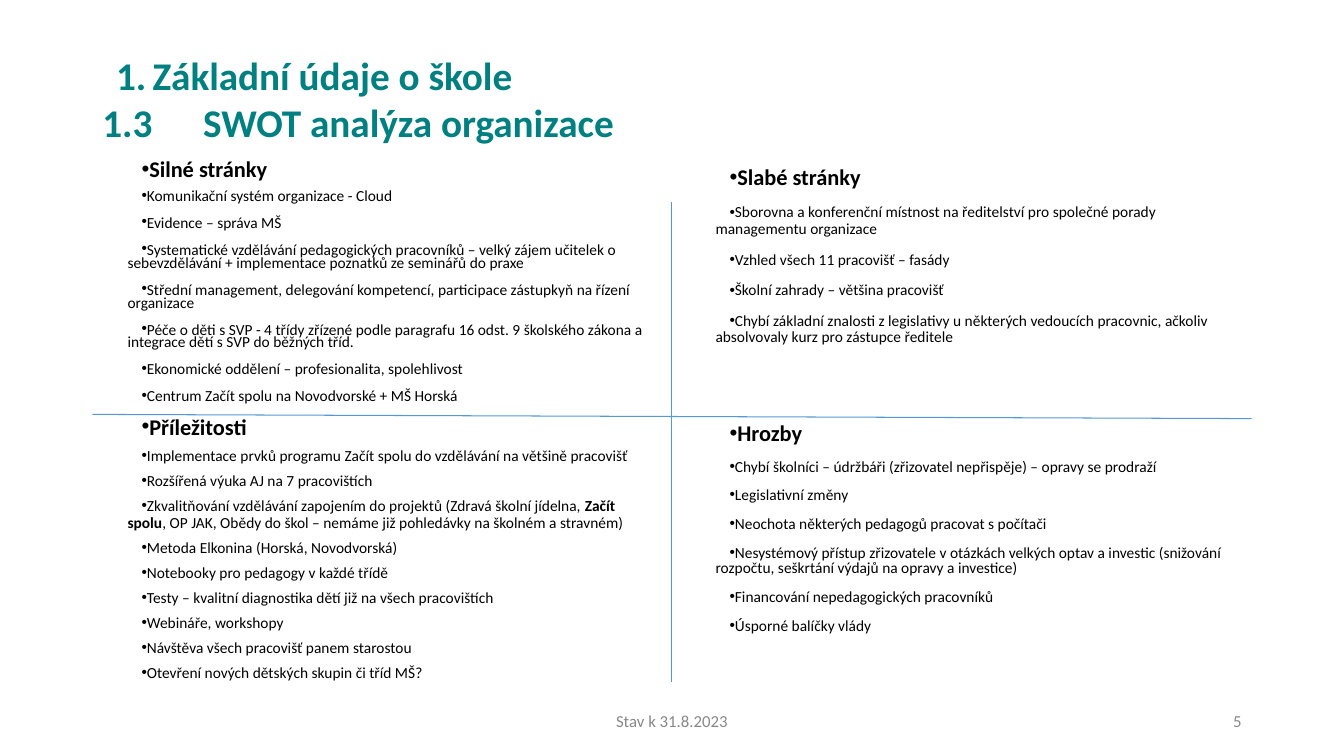
from dataclasses import dataclass
from lxml.etree import SubElement
from pptx import Presentation
from pptx.dml.color import RGBColor as Rgb
from pptx.enum.shapes import MSO_CONNECTOR as Conn
from pptx.enum.text import MSO_ANCHOR as Anchor, PP_ALIGN as Align
from pptx.oxml.ns import qn
from pptx.util import Pt

HUES = {"teal": "008080", "black": "000000", "gray": "888888", "blue": "5698D3"}
FONT = "Calibri"


@dataclass
class Box:
    left: float
    top: float
    width: float
    height: float
    anchor: Anchor = Anchor.TOP
    edge: float = 7.2
    base: float = 7.2


@dataclass
class Group:
    head: str
    items: list[str]
    gap: float
    lead: float
    first: float
    after: float
    pitch: float


@dataclass
class Column:
    box: Box
    groups: list[Group]


@dataclass
class Note:
    box: Box
    text: str
    align: Align


@dataclass
class Rule:
    x1: float
    y1: float
    x2: float
    y2: float


TITLE = Box(66, 28.8, 828, 104.4, Anchor.MIDDLE, base=38)
TITLES = ["1.\tZákladní údaje o škole", "1.3 \tSWOT analýza organizace"]

COLUMNS = [
    Column(Box(66, 106, 408, 381), [
        Group("Silné stránky", [
            "Komunikační systém organizace - Cloud",
            "Evidence – správa MŠ",
            "Systematické vzdělávání pedagogických pracovníků – velký zájem učitelek o "
            "sebevzdělávání + implementace poznatků ze seminářů do praxe",
            "Střední management, delegování kompetencí, participace zástupkyň na řízení organizace",
            "Péče o děti s SVP - 4 třídy zřízené podle paragrafu 16 odst. 9 školského zákona a "
            "integrace dětí s SVP do běžných tříd.",
            "Ekonomické oddělení – profesionalita, spolehlivost",
            "Centrum Začít spolu na Novodvorské + MŠ Horská",
        ], gap=10, lead=0.9, first=6, after=10, pitch=0.7),
        Group("Příležitosti", [
            "Implementace prvků programu Začít spolu do vzdělávání na většině pracovišť",
            "Rozšířená výuka AJ na 7 pracovištích",
            "Zkvalitňování vzdělávání zapojením do projektů (Zdravá školní jídelna, *Začít spolu*"
            ", OP JAK, Obědy do škol – nemáme již pohledávky na školném a stravném)",
            "Metoda Elkonina (Horská, Novodvorská)",
            "Notebooky pro pedagogy v každé třídě",
            "Testy – kvalitní diagnostika dětí již na všech pracovištích",
            "Webináře, workshopy",
            "Návštěva všech pracovišť panem starostou",
            "Otevření nových dětských skupin či tříd MŠ?",
        ], gap=6, lead=1.0, first=6, after=6, pitch=0.9),
    ]),
    Column(Box(486, 111.6, 408, 375.4), [
        Group("Slabé stránky", [
            "Sborovna a konferenční místnost na ředitelství pro společné porady managementu organizace",
            "Vzhled všech 11 pracovišť – fasády",
            "Školní zahrady – většina pracovišť",
            "Chybí základní znalosti z legislativy u některých vedoucích pracovnic, ačkoliv "
            "absolvovaly kurz pro zástupce ředitele",
        ], gap=10, lead=0.9, first=10, after=10, pitch=0.9),
        Group("Hrozby", [
            "Chybí školníci – údržbáři (zřizovatel nepřispěje) – opravy se prodraží",
            "Legislativní změny",
            "Neochota některých pedagogů pracovat s počítači",
            "Nesystémový přístup zřizovatele v otázkách velkých optav a investic (snižování "
            "rozpočtu, seškrtání výdajů na opravy a investice)",
            "Financování nepedagogických pracovníků",
            "Úsporné balíčky vlády",
        ], gap=54.2, lead=0.9, first=10, after=10, pitch=0.8),
    ]),
]
NOTES = [
    Note(Box(678, 500.4, 216, 28.8, Anchor.MIDDLE, 3.6, 3.6), "5", Align.RIGHT),
    Note(Box(318, 500.4, 324, 28.8, Anchor.MIDDLE), "Stav k 31.8.2023", Align.CENTER),
]
RULES = [Rule(480, 144, 480, 487), Rule(66, 296, 894, 299)]


def style(run, size: float, hue: str, bold: bool = False) -> None:
    font = run.font
    font.name, font.size, font.bold = FONT, Pt(size), bold
    font.color.rgb = Rgb.from_string(HUES[hue])


def add_box(slide, box: Box):
    shape = slide.shapes.add_textbox(Pt(box.left), Pt(box.top), Pt(box.width), Pt(box.height))
    frame = shape.text_frame
    frame.word_wrap = True
    frame.vertical_anchor = box.anchor
    frame.margin_left = frame.margin_right = Pt(7.2)
    frame.margin_top, frame.margin_bottom = Pt(box.edge), Pt(box.base)
    return frame


def add_title(slide) -> None:
    para = add_box(slide, TITLE).paragraphs[0]
    para.line_spacing = 0.9
    para.text = " "
    style(para.runs[0], 44, "teal", True)
    for num, text in enumerate(TITLES):
        if num:
            para.add_line_break()
        run = para.add_run()
        run.text = text
        style(run, 28, "teal", True)


def add_point(para, text: str, size: float, bold: bool, gap: float, pitch: float) -> None:
    parts = text.split("*")
    para.text = parts[0]
    for part in parts[1:]:
        para.add_run().text = part
    for num, run in enumerate(para.runs):
        style(run, size, "black", bold or num % 2 == 1)
    para.space_before, para.line_spacing = Pt(gap), pitch
    props = para._p.get_or_add_pPr()
    props.set("marL", str(Pt(18)))
    props.set("indent", str(Pt(10)))
    SubElement(SubElement(props, qn("a:buClr")), qn("a:srgbClr")).set("val", HUES["black"])
    SubElement(props, qn("a:buFont")).set("typeface", "Arial")
    SubElement(props, qn("a:buChar")).set("char", "•")


def add_column(slide, column: Column) -> None:
    frame = add_box(slide, column.box)
    para = frame.paragraphs[0]
    for num, group in enumerate(column.groups):
        if num:
            para = frame.add_paragraph()
        add_point(para, group.head, 16, True, group.gap, group.lead)
        for row, item in enumerate(group.items):
            gap = group.after if row else group.first
            add_point(frame.add_paragraph(), item, 11, False, gap, group.pitch)


def add_note(slide, note: Note) -> None:
    para = add_box(slide, note.box).paragraphs[0]
    para.text = note.text
    para.alignment = note.align
    style(para.runs[0], 12, "gray")


def add_rule(slide, rule: Rule) -> None:
    line = slide.shapes.add_connector(
        Conn.STRAIGHT, Pt(rule.x1), Pt(rule.y1), Pt(rule.x2), Pt(rule.y2))
    line.line.color.rgb = Rgb.from_string(HUES["blue"])
    line.line.width = Pt(0.75)
    SubElement(line._element.spPr, qn("a:effectLst"))


def main() -> None:
    deck = Presentation()
    deck.slide_width, deck.slide_height = Pt(960), Pt(540)
    slide = deck.slides.add_slide(deck.slide_layouts[6])
    add_title(slide)
    for column in COLUMNS:
        add_column(slide, column)
    for rule in RULES:
        add_rule(slide, rule)
    for note in NOTES:
        add_note(slide, note)
    deck.save("out.pptx")


if __name__ == "__main__":
    main()
